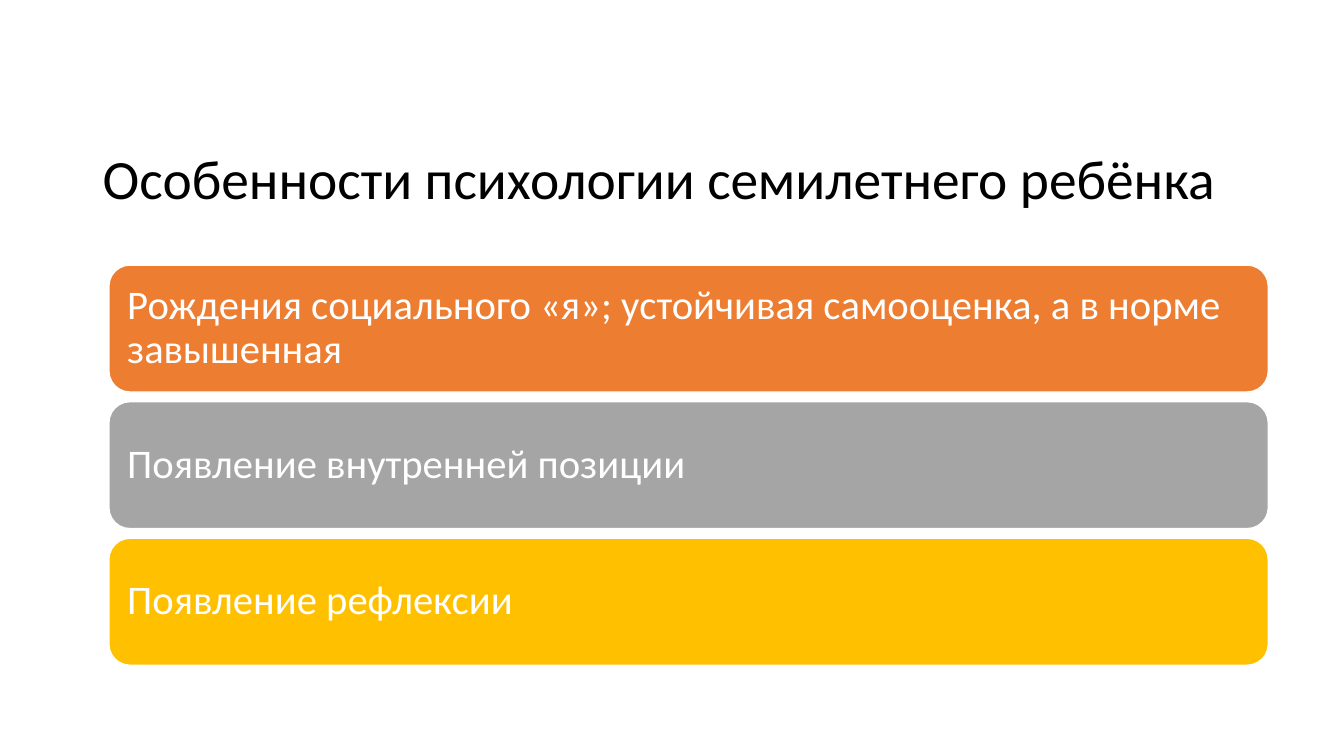
from dataclasses import dataclass

from pptx import Presentation
from pptx import util as u
from pptx.dml.color import RGBColor
from pptx.enum import shapes, text


@dataclass(frozen=True)
class Theme:
    """Colours, font and type sizes of the slide."""
    font: str = "Calibri"
    title_size: float = 39.6
    card_size: float = 29
    ink: str = "000000"
    paper: str = "FFFFFF"
    cards: tuple = ("ED7D31", "A5A5A5", "FFC000")


THEME = Theme()
TITLE = "Особенности психологии семилетнего ребёнка"
FEATURES = (
    "Рождения социального «я»; устойчивая самооценка, а в норме завышенная",
    "Появление внутренней позиции",
    "Появление рефлексии",
)
CARD_LEFT, CARD_TOP, CARD_WIDTH, CARD_HEIGHT = 1.08, 2.63, 11.5, 1.26
CARD_PITCH = 1.355
CARD_INSET = 0.12


def write(tf, words, size, color):
    """Fill a text frame with one left-aligned, vertically centred paragraph."""
    tf.word_wrap = True
    tf.vertical_anchor = text.MSO_ANCHOR.MIDDLE
    p = tf.paragraphs[0]
    p.alignment = text.PP_ALIGN.LEFT
    p.line_spacing = 0.9
    r = p.add_run()
    r.text = words
    r.font.name = THEME.font
    r.font.size = u.Pt(size)
    r.font.color.rgb = RGBColor.from_string(color)


def add_title(s, words):
    """Add the slide heading."""
    box = s.shapes.add_textbox(u.Inches(0.92), u.Inches(1.49), u.Inches(11.5), u.Inches(0.62))
    write(box.text_frame, words, THEME.title_size, THEME.ink)


def add_card(s, top, words, fill):
    """Add one rounded card with its text."""
    sp = s.shapes.add_shape(
        shapes.MSO_SHAPE.ROUNDED_RECTANGLE,
        u.Inches(CARD_LEFT), u.Inches(top), u.Inches(CARD_WIDTH), u.Inches(CARD_HEIGHT),
    )
    sp.shadow.inherit = False
    sp.fill.solid()
    sp.fill.fore_color.rgb = RGBColor.from_string(fill)
    sp.line.color.rgb = RGBColor.from_string(THEME.paper)
    sp.line.width = u.Pt(1)
    tf = sp.text_frame
    tf.margin_left = tf.margin_right = tf.margin_top = tf.margin_bottom = u.Inches(CARD_INSET)
    write(tf, words, THEME.card_size, THEME.paper)


def main():
    """Build the slide and save it."""
    prs = Presentation()
    prs.slide_width, prs.slide_height = u.Inches(13.33), u.Inches(7.5)
    s = prs.slides.add_slide(prs.slide_layouts[6])
    add_title(s, TITLE)
    for i, (words, fill) in enumerate(zip(FEATURES, THEME.cards)):
        add_card(s, CARD_TOP + i * CARD_PITCH, words, fill)
    prs.save("out.pptx")


if __name__ == "__main__":
    main()
